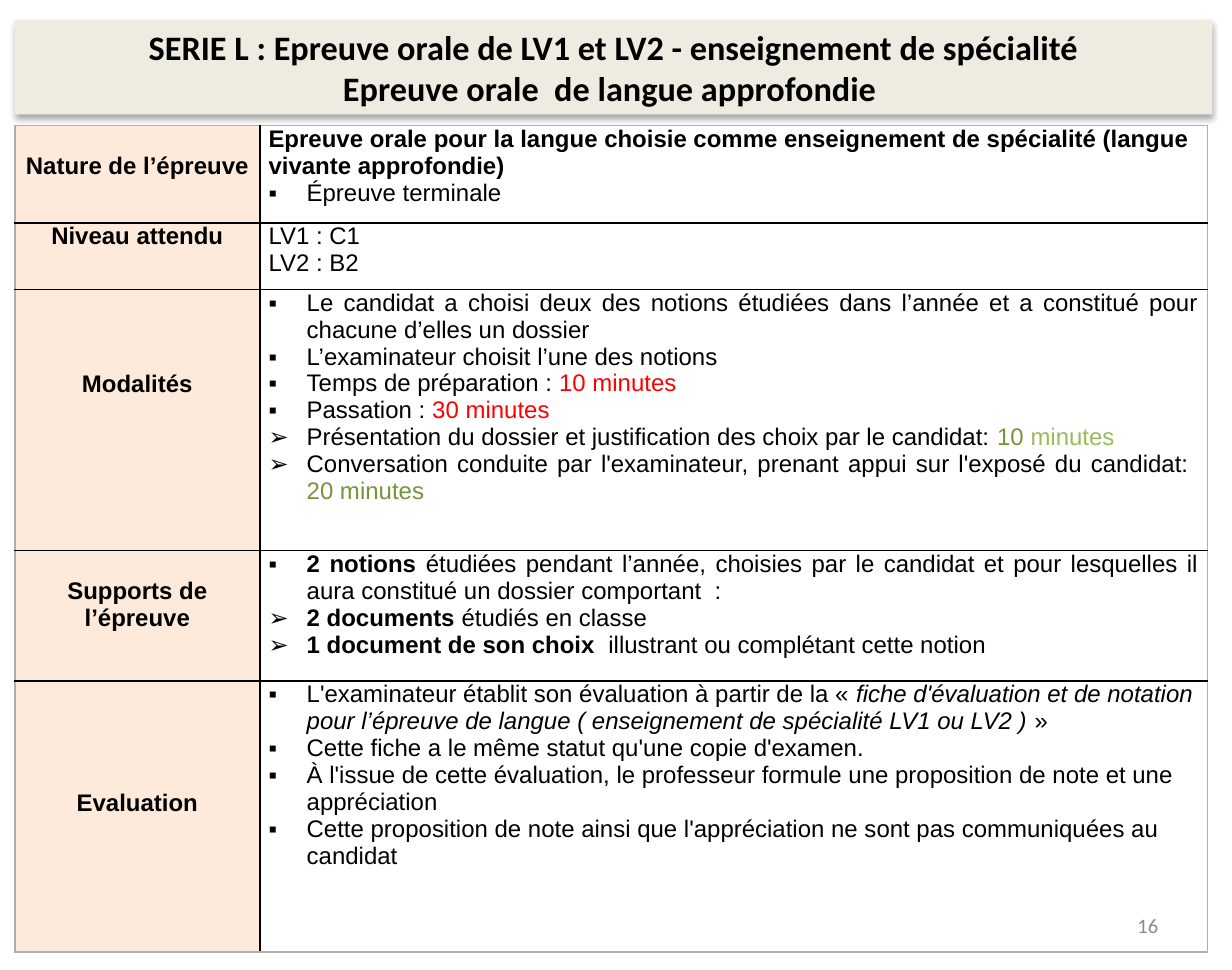
from lxml import etree
from pptx import Presentation
from pptx.dml.color import RGBColor
from pptx.enum.shapes import MSO_SHAPE
from pptx.enum.text import MSO_ANCHOR, PP_ALIGN
from pptx.oxml.ns import qn
from pptx.util import Inches, Pt

RECTANGLE = MSO_SHAPE.RECTANGLE
MIDDLE = MSO_ANCHOR.MIDDLE
LEFT, CENTER, RIGHT, JUSTIFY = PP_ALIGN.LEFT, PP_ALIGN.CENTER, PP_ALIGN.RIGHT, PP_ALIGN.JUSTIFY

WIDTH, HEIGHT = 10, 7.875
MARGIN = 0.12
COLUMNS = [1.99, 7.69]
ROWS = [0.79, 0.54, 2.12, 1.06, 2.2]
LINE_HEIGHT = 0.22
HANGING = 0.31
BLACK, RED, GREEN, LIGHT_GREEN = "000000", "FF0000", "77933C", "9BBB59"
IVORY, PEACH, GREY, FRAME_GREY = "EEECE1", "FDEADA", "898989", "B0B0B0"
SQUARE, ARROW = "▪", "➢"
BOLD, ITALIC = {"bold": True}, {"italic": True}

TITLE = [
    "SERIE L : Epreuve orale de LV1 et LV2 - enseignement de spécialité",
    "Epreuve orale  de langue approfondie ",
]

SECTIONS = [
    ("Nature de l’épreuve", 1, [
        (None, LEFT, [("Epreuve orale pour la langue choisie comme enseignement de spécialité "
                       "(langue vivante approfondie)", BOLD)]),
        (SQUARE, LEFT, [("Épreuve terminale ", {})]),
    ]),
    ("Niveau attendu", 0, [
        (None, LEFT, [("LV1 : C1", {})]),
        (None, LEFT, [("LV2 : B2", {})]),
    ]),
    ("Modalités", 3, [
        (SQUARE, JUSTIFY, [("Le candidat a choisi deux des notions étudiées dans l’année "
                            "et a constitué pour chacune d’elles un dossier", {})]),
        (SQUARE, JUSTIFY, [("L’examinateur choisit l’une des notions", {})]),
        (SQUARE, JUSTIFY, [("Temps de préparation : ", {}), ("10 minutes", {"color": RED})]),
        (SQUARE, JUSTIFY, [("Passation : ", {}), ("30 minutes", {"color": RED})]),
        (ARROW, JUSTIFY, [("Présentation du dossier et justification des choix par le candidat: ", {}),
                          ("10 ", {"color": GREEN}), ("minutes", {"color": LIGHT_GREEN})]),
        (ARROW, JUSTIFY, [("Conversation conduite par l'examinateur, prenant appui sur "
                           "l'exposé du candidat:  ", {}), ("20 minutes ", {"color": GREEN})]),
    ]),
    ("Supports de l’épreuve", 1, [
        (SQUARE, JUSTIFY, [("2 notions ", BOLD),
                           ("étudiées pendant l’année, choisies par le candidat et pour lesquelles "
                            "il aura constitué un dossier comportant  :", {})]),
        (ARROW, JUSTIFY, [("2 documents ", BOLD), ("étudiés en classe ", {})]),
        (ARROW, JUSTIFY, [("1 document de son choix  ", BOLD),
                          ("illustrant ou complétant cette notion", {})]),
    ]),
    ("Evaluation", 4, [
        (SQUARE, LEFT, [("L'examinateur établit son évaluation à partir de la « ", {}),
                        ("fiche d'évaluation et de notation pour l’épreuve de langue "
                         "( enseignement de spécialité LV1 ou LV2 ) ", ITALIC), ("»", {})]),
        (SQUARE, LEFT, [("Cette fiche a le même statut qu'une copie d'examen.", {})]),
        (SQUARE, LEFT, [("À l'issue de cette évaluation, le professeur formule une proposition "
                         "de note et une appréciation", {})]),
        (SQUARE, LEFT, [("Cette proposition de note ainsi que l'appréciation ne sont pas "
                         "communiquées au candidat", {})]),
    ]),
]


def paint(fill, color):
    """Give a fill a solid hex colour."""
    fill.solid()
    fill.fore_color.rgb = RGBColor.from_string(color)


def add_text(paragraph, text, size=14, font="Arial", color=BLACK, bold=False, italic=False):
    """Append a formatted run to a paragraph."""
    run = paragraph.add_run()
    run.text = text
    run.font.size, run.font.name = Pt(size), font
    run.font.bold, run.font.italic = bold, italic
    paint(run.font.fill, color)


def next_paragraph(frame, index, alignment):
    """Return the paragraph at an index, adding it after the first."""
    paragraph = frame.add_paragraph() if index else frame.paragraphs[0]
    paragraph.alignment = alignment
    return paragraph


def set_bullet(paragraph, character):
    """Give a paragraph a hanging bullet."""
    properties = paragraph._p.get_or_add_pPr()
    properties.set("marL", str(Inches(HANGING)))
    properties.set("indent", str(-Inches(HANGING)))
    etree.SubElement(properties, qn("a:buFont"), typeface="Arial")
    etree.SubElement(properties, qn("a:buChar"), char=character)


def set_borders(cell, row, column):
    """Draw black inner rules and a grey outer frame."""
    outer = {"lnL": column == 0, "lnR": column == len(COLUMNS) - 1,
             "lnT": row == 0, "lnB": row == len(ROWS) - 1}
    for side, on_frame in outer.items():
        line = etree.SubElement(cell._tc.get_or_add_tcPr(), qn("a:" + side), w=str(Pt(1)))
        fill = etree.SubElement(line, qn("a:solidFill"))
        etree.SubElement(fill, qn("a:srgbClr"), val=FRAME_GREY if on_frame else BLACK)


def prepare_cell(cell, row, column):
    """Set the borders, insets and fill of a cell."""
    set_borders(cell, row, column)
    cell.margin_left = cell.margin_right = Inches(0.07)
    cell.margin_top = cell.margin_bottom = 0
    if column == 0:
        paint(cell.fill, PEACH)
    else:
        cell.fill.background()


def add_shadow(shape):
    """Put a soft shadow below a shape."""
    shape.shadow.inherit = False
    effects = shape._element.spPr.find(qn("a:effectLst"))
    shadow = etree.SubElement(effects, qn("a:outerShdw"), blurRad=str(Pt(3.5)),
                              dist=str(Pt(2.2)), dir="5400000", rotWithShape="0")
    color = etree.SubElement(shadow, qn("a:srgbClr"), val=BLACK)
    etree.SubElement(color, qn("a:alpha"), val="32000")


def add_title(slide):
    """Add the title band."""
    band = slide.shapes.add_shape(RECTANGLE, Inches(MARGIN), Inches(0.16),
                                  Inches(WIDTH - 0.28), Inches(0.77))
    paint(band.fill, IVORY)
    band.line.fill.background()
    add_shadow(band)
    band.text_frame.word_wrap = True
    for index, line in enumerate(TITLE):
        add_text(next_paragraph(band.text_frame, index, CENTER), line,
                 size=20, font="Calibri", bold=True)


def add_sections(slide):
    """Add the table of exam sections: heading, lines above it, detail paragraphs."""
    table = slide.shapes.add_table(len(ROWS), len(COLUMNS), Inches(MARGIN), Inches(1.02),
                                   Inches(sum(COLUMNS)), Inches(sum(ROWS))).table
    table.first_row = table.horz_banding = False
    for column, width in zip(table.columns, COLUMNS):
        column.width = Inches(width)
    for row, (heading, lines_above, paragraphs) in enumerate(SECTIONS):
        table.rows[row].height = Inches(ROWS[row])
        label, details = table.cell(row, 0), table.cell(row, 1)
        prepare_cell(label, row, 0)
        prepare_cell(details, row, 1)
        label.margin_top = Inches(lines_above * LINE_HEIGHT)
        add_text(next_paragraph(label.text_frame, 0, CENTER), heading, bold=True)
        for index, (bullet, alignment, runs) in enumerate(paragraphs):
            paragraph = next_paragraph(details.text_frame, index, alignment)
            if bullet:
                set_bullet(paragraph, bullet)
            for text, style in runs:
                add_text(paragraph, text, **style)


def add_page_number(slide):
    """Add the page number at the bottom right."""
    frame = slide.shapes.add_textbox(Inches(7.17), Inches(7.3),
                                     Inches(2.33), Inches(0.42)).text_frame
    frame.word_wrap = True
    frame.vertical_anchor = MIDDLE
    add_text(next_paragraph(frame, 0, RIGHT), "16", size=12, font="Calibri", color=GREY)


def main():
    """Build and save the slide."""
    presentation = Presentation()
    presentation.slide_width, presentation.slide_height = Inches(WIDTH), Inches(HEIGHT)
    slide = presentation.slides.add_slide(presentation.slide_layouts[6])
    add_title(slide)
    add_sections(slide)
    add_page_number(slide)
    presentation.save("out.pptx")


if __name__ == "__main__":
    main()
